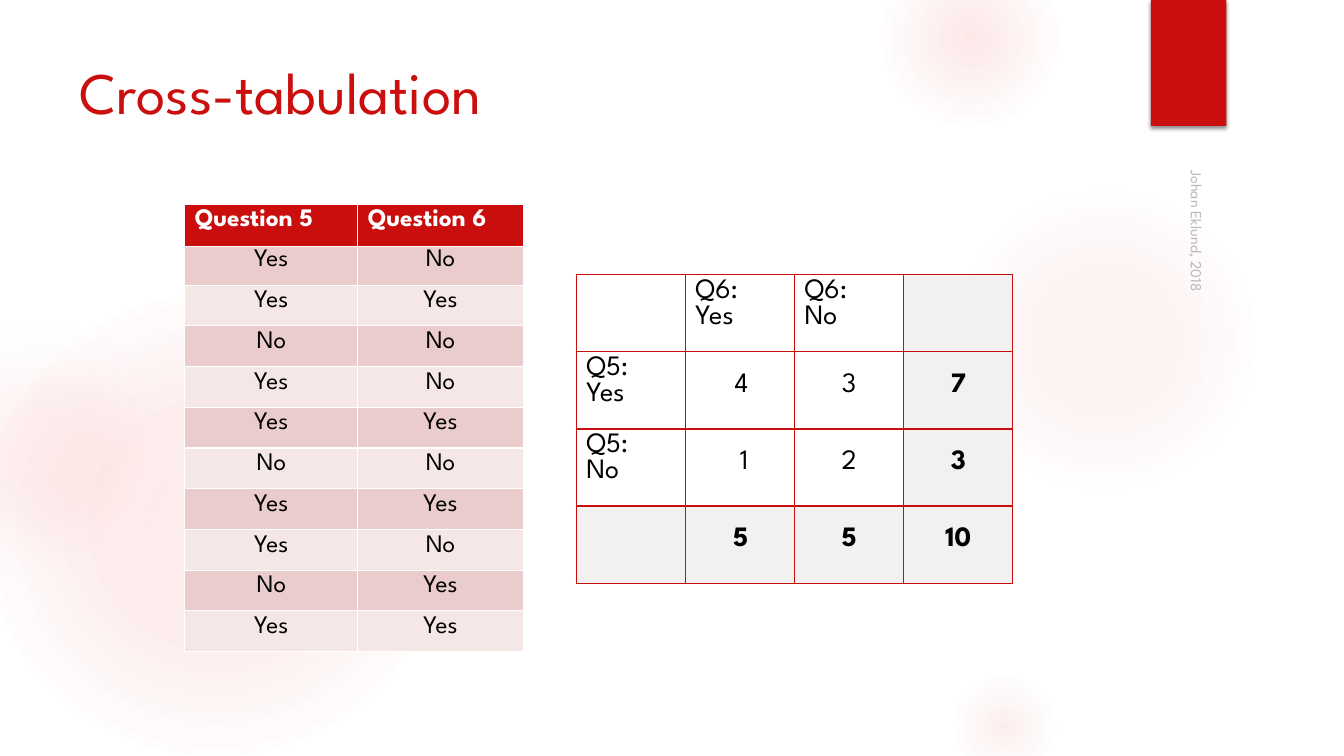
from pptx import Presentation
from pptx.enum.shapes import MSO_SHAPE
from pptx.enum.text import MSO_ANCHOR, PP_ALIGN
from pptx.oxml.ns import qn
from pptx.oxml.xmlchemy import OxmlElement
from pptx.util import Inches, Pt

OVAL, RECTANGLE = MSO_SHAPE.OVAL, MSO_SHAPE.RECTANGLE
TOP, BOTTOM = MSO_ANCHOR.TOP, MSO_ANCHOR.BOTTOM
LEFT, CENTER, RIGHT = PP_ALIGN.LEFT, PP_ALIGN.CENTER, PP_ALIGN.RIGHT
COLUMNS, ROWS = 160, 90
TITLE_ONLY = 5


def element(tag, parent=None, **attributes):
    node = OxmlElement(tag)
    for name, value in attributes.items():
        node.set(name, str(value))
    if parent is not None:
        parent.append(node)
    return node


def color(hex_code, parent, alpha=100):
    tint = element("a:srgbClr", parent, val=hex_code)
    if alpha < 100:
        element("a:alpha", tint, val=alpha * 1000)


def paint(fill, hex_code, alpha=100):
    fill.solid()
    color(hex_code, fill._xPr.find(qn("a:solidFill")), alpha)


class SlideBuilder:
    """Draws styled elements on one slide, measured in grid columns and rows."""

    font = "League Spartan"
    red, table_red, glow_red = "CB0F0F", "CA0E0E", "F35C5C"
    black, white, gray = "000000", "FFFFFF", "8C8C8C"
    bands = ("EBCCCC", "F6E7E7")
    total_fill = "F1F1F1"

    def __init__(self, deck):
        self.unit_x = deck.slide_width / COLUMNS
        self.unit_y = deck.slide_height / ROWS
        self.slide = deck.slides.add_slide(deck.slide_layouts[TITLE_ONLY])

    def x(self, columns):
        return round(columns * self.unit_x)

    def y(self, rows):
        return round(rows * self.unit_y)

    def box(self, left, top, width, height):
        return self.x(left), self.y(top), self.x(width), self.y(height)

    def add_text(self, frame, lines, size, hex_code, align=LEFT, bold=False, alpha=100):
        for index, line in enumerate(lines):
            paragraph = frame.paragraphs[0] if index == 0 else frame.add_paragraph()
            paragraph.alignment = align
            run = paragraph.add_run()
            run.text = line
            run.font.name, run.font.size, run.font.bold = self.font, Pt(size), bold
            paint(run.font.fill, hex_code, alpha)

    def title(self, wording, *place):
        heading = self.slide.shapes.title
        heading.left, heading.top, heading.width, heading.height = self.box(*place)
        frame = heading.text_frame
        frame.margin_left = frame.margin_right = frame.margin_top = frame.margin_bottom = 0
        frame.vertical_anchor = BOTTOM
        self.add_text(frame, [wording], 42, self.red)

    def plain_shape(self, kind, *place):
        shape = self.slide.shapes.add_shape(kind, *self.box(*place))
        shape.shadow.inherit = False
        shape.line.fill.background()
        return shape

    def glow(self, left, top, size, stops):
        halo = self.plain_shape(OVAL, left, top, size, size)
        halo.fill.gradient()
        gradient = halo._element.spPr.find(qn("a:gradFill"))
        gradient.clear()
        stop_list = element("a:gsLst", gradient)
        for position, hex_code, alpha in stops:
            stop = element("a:gs", stop_list, pos=position * 1000)
            color(hex_code, stop, alpha)
        circle = element("a:path", gradient, path="circle")
        element("a:fillToRect", circle, l=50000, t=50000, r=50000, b=50000)

    def ribbon(self, *place):
        ribbon = self.plain_shape(RECTANGLE, *place)
        paint(ribbon.fill, self.red)
        effects = ribbon._element.spPr.find(qn("a:effectLst"))
        shadow = element("a:outerShdw", effects, blurRad=Pt(3), dist=Pt(2),
                         dir=90 * 60000, rotWithShape=0)
        color(self.black, shadow, 45)

    def credit(self, wording, *place):
        credit = self.slide.shapes.add_textbox(*self.box(*place))
        credit.rotation = 90
        credit.text_frame.word_wrap = True
        credit.text_frame.vertical_anchor = BOTTOM
        self.add_text(credit.text_frame, [wording], 11, self.gray, alpha=60)

    def table(self, left, top, widths, heights):
        frame = self.slide.shapes.add_table(
            len(heights), len(widths), *self.box(left, top, sum(widths), sum(heights)))
        grid = frame.table
        grid.first_row = grid.horz_banding = False
        for column, width in zip(grid.columns, widths):
            column.width = self.x(width)
        for row, height in zip(grid.rows, heights):
            row.height = self.y(height)
        return grid

    def cell(self, cell, lines, size, border, fill=None, hex_code=black,
             align=LEFT, bold=False, inset=0.05, right=0):
        cell.margin_left = Inches(0.1 if align == LEFT else 0)
        cell.margin_top, cell.margin_right, cell.margin_bottom = Inches(inset), Inches(right), 0
        cell.vertical_anchor = TOP
        properties = cell._tc.get_or_add_tcPr()
        for side in ("a:lnL", "a:lnR", "a:lnT", "a:lnB"):
            edge = element(side, properties, w=Pt(1))
            color(border, element("a:solidFill", edge))
        if fill:
            paint(cell.fill, fill)
        else:
            cell.fill.background()
        self.add_text(cell.text_frame, lines, size, hex_code, align, bold)

    def answer_table(self, questions, answers, left, top):
        heights = [5, 4.64] + [4.85] * (len(answers) - 1)
        grid = self.table(left, top, [20.6, 19.7], heights)
        for column, question in enumerate(questions):
            self.cell(grid.cell(0, column), [question], 18, self.white,
                      self.table_red, self.white, bold=True)
        for row, pair in enumerate(answers, 1):
            for column, answer in enumerate(pair):
                self.cell(grid.cell(row, column), [answer], 18, self.white,
                          self.bands[(row - 1) % 2], align=CENTER,
                          inset=0.03 if row == 1 else 0.05)

    def cross_table(self, rows, left, top):
        last = len(rows) - 1
        grid = self.table(left, top, [13] * len(rows), [9.18] * len(rows))
        for row, values in enumerate(rows):
            for column, value in enumerate(values):
                label = row == 0 or column == 0
                total = last in (row, column)
                align = LEFT if label else RIGHT if column == 1 else CENTER
                self.cell(grid.cell(row, column), value.split("\n") if value else [], 20,
                          self.table_red, self.total_fill if total else None,
                          align=align, bold=total, inset=0.04 if label else 0.21,
                          right=0.46 if align == RIGHT else 0)


def main():
    deck = Presentation()
    deck.slide_width, deck.slide_height = Inches(13.33), Inches(7.5)
    page = SlideBuilder(deck)
    red = page.glow_red
    page.glow(-2, 35, 55, [(0, red, 11), (36, red, 10), (75, red, 0)])
    page.glow(-11, 38, 31, [(0, red, 8), (36, red, 5), (71, "F3F3F3", 0)])
    page.glow(113, 22, 37, [(0, red, 7), (36, red, 6), (69, red, 0)])
    page.glow(105, -6, 21, [(0, red, 14), (36, red, 7), (73, red, 0)])
    page.glow(113, 80, 13, [(0, red, 10), (31, red, 5), (66, red, 0)])
    page.ribbon(137, 0, 9, 15)
    page.title("Cross-tabulation", 9.5, 6.25, 55.5, 8.75)
    answers = [("Yes", "No"), ("Yes", "Yes"), ("No", "No"), ("Yes", "No"), ("Yes", "Yes"),
               ("No", "No"), ("Yes", "Yes"), ("Yes", "No"), ("No", "Yes"), ("Yes", "Yes")]
    page.answer_table(("Question 5", "Question 6"), answers, 22, 24.3)
    page.cross_table([("", "Q6:\nYes", "Q6:\nNo", ""),
                      ("Q5:\nYes", "4", "3", "7"),
                      ("Q5:\nNo", "1", "2", "3"),
                      ("", "5", "5", "10")], 68.6, 32.7)
    page.credit("Johan Eklund, 2018", 117.5, 42.4, 50.6, 4)
    deck.save("out.pptx")


if __name__ == "__main__":
    main()
